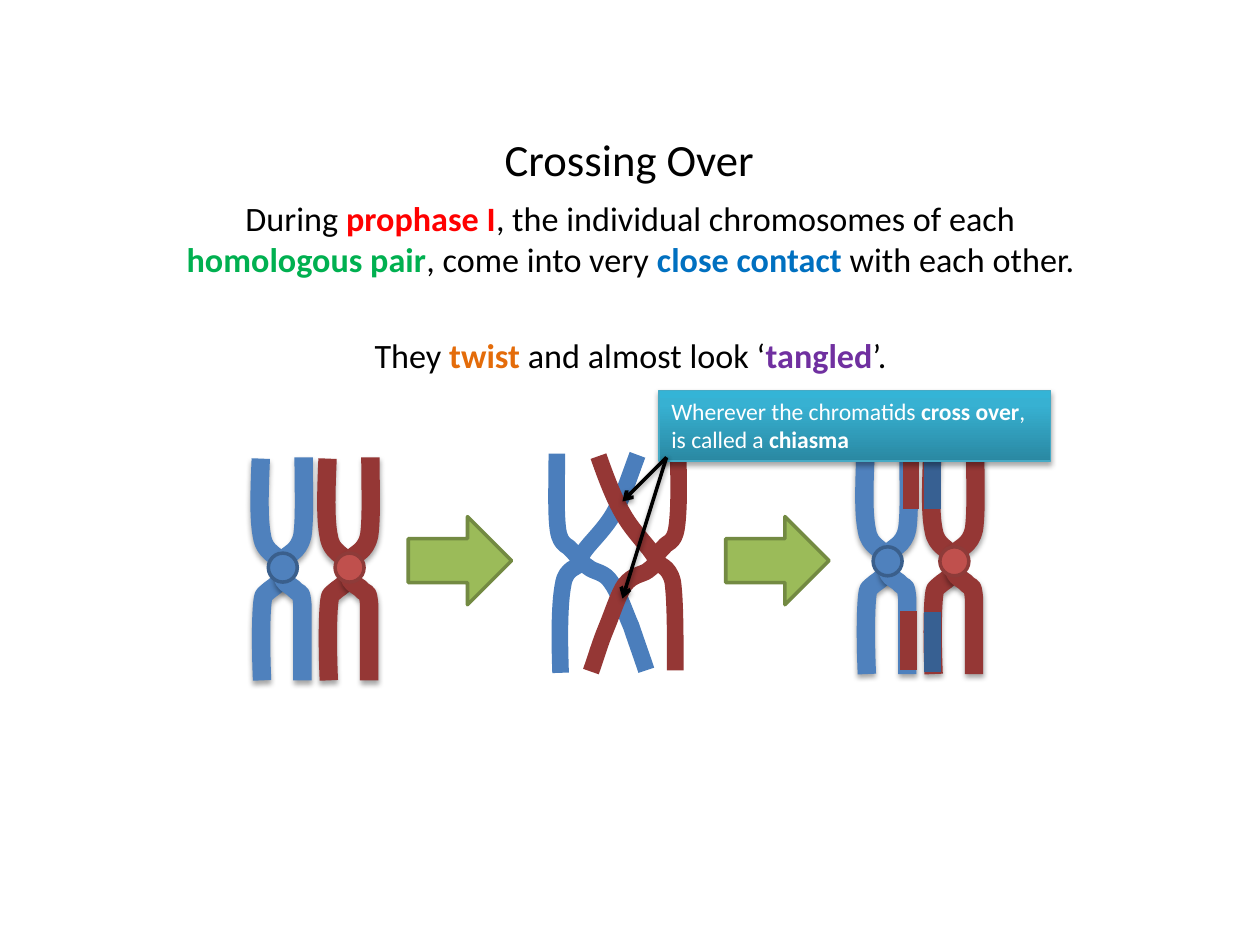
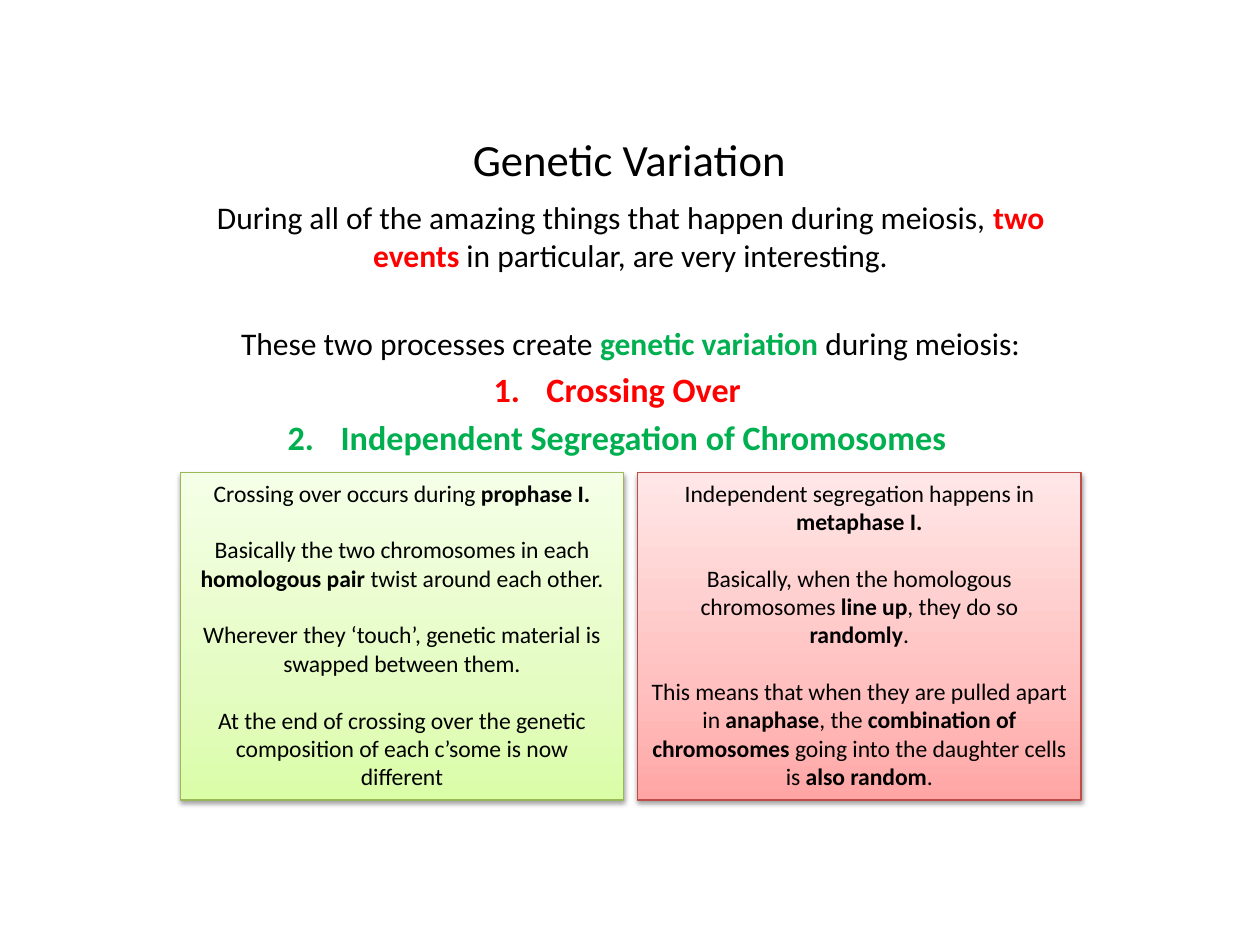
from dataclasses import dataclass
from typing import NamedTuple

from lxml import etree
from pptx import Presentation
from pptx.dml.color import RGBColor
from pptx.enum.shapes import MSO_CONNECTOR, MSO_SHAPE
from pptx.enum.text import MSO_ANCHOR, PP_ALIGN
from pptx.oxml.ns import qn
from pptx.util import Pt

PX = 9144  # 100 px to the inch
LEFT, CENTER = PP_ALIGN.LEFT, PP_ALIGN.CENTER
TOP, MIDDLE = MSO_ANCHOR.TOP, MSO_ANCHOR.MIDDLE
RECTANGLE, OVAL, RIGHT_ARROW = MSO_SHAPE.RECTANGLE, MSO_SHAPE.OVAL, MSO_SHAPE.RIGHT_ARROW
STRAIGHT = MSO_CONNECTOR.STRAIGHT


# Theme
@dataclass(frozen=True)
class Theme:
    font: str = "Calibri"
    title_size: float = 25.5
    lead_size: float = 19.5
    intro_size: float = 18
    note_size: float = 13.5
    line_height: float = 1.2
    space_before: float = 0.2
    outline: float = 0.75
    bold_outline: float = 2
    chromatid: float = 10.5
    strand: float = 9.5
    black: str = "000000"
    white: str = "FFFFFF"
    red: str = "FF0000"
    green: str = "00B050"
    blue: str = "0070C0"
    orange: str = "E46C0A"
    purple: str = "7030A0"
    maternal: str = "4F81BD"
    maternal_edge: str = "3A5F8C"
    maternal_strand: str = "4B7EBC"
    maternal_swap: str = "376092"
    paternal: str = "953735"
    paternal_center: str = "C0504D"
    paternal_edge: str = "8E3B39"
    step: str = "9BBB59"
    step_edge: str = "738A42"


THEME = Theme()


class Box(NamedTuple):
    x: int
    y: int
    w: int
    h: int


class Run(NamedTuple):
    text: str
    color: str = ""
    bold: bool = False


@dataclass(frozen=True)
class Para:
    runs: list[Run]
    size: float
    gap: bool = False  # one empty line's height above
    numbered: bool = False


class Shadow(NamedTuple):
    opacity: int
    blur: float
    distance: float


class Panel(NamedTuple):
    box: Box
    stops: list[tuple[int, str]]
    edge: str
    shadow: Shadow


class Chromosome(NamedTuple):
    x: int
    y: int
    arms: str
    center: str
    edge: str


class Strand(NamedTuple):
    color: str
    points: list[tuple[int, int]]


SOFT = Shadow(35, 3.1, 1.8)
FIRM = Shadow(38, 3.1, 1.6)
TITLE_BOX = Box(162, 111, 675, 29)
BODY_BOX = Box(137, 152, 727, 492)


def bold(text: str, color: str = "") -> Run:
    return Run(text, color, True)


# Drawing helpers
def rgb(color: str) -> RGBColor:
    return RGBColor.from_string(color)


def child(parent, tag: str, **attributes):
    return etree.SubElement(parent, qn(tag), {k: str(v) for k, v in attributes.items()})


def set_line(item, color: str, width: float) -> None:
    item.line.color.rgb = rgb(color)
    item.line.width = Pt(width)


def set_shadow(item, shadow: Shadow | None = None) -> None:
    """Call after fill and line: the effect list follows them."""
    effects = child(item._element.spPr, "a:effectLst")
    if shadow:
        outer = child(effects, "a:outerShdw", blurRad=Pt(shadow.blur),
                      dist=Pt(shadow.distance), dir=90 * 60000, rotWithShape=0)
        color = child(outer, "a:srgbClr", val=THEME.black)
        child(color, "a:alpha", val=shadow.opacity * 1000)


def write(frame, paras: list[Para], color: str, align: PP_ALIGN,
          anchor: MSO_ANCHOR = TOP, spacing: float = 0) -> None:
    frame.word_wrap = True
    frame.vertical_anchor = anchor
    for index, para in enumerate(paras):
        line = frame.paragraphs[0] if index == 0 else frame.add_paragraph()
        line.alignment = align
        lines_above = spacing + (THEME.line_height + spacing if para.gap else 0)
        line.space_before = Pt(round(para.size * lines_above, 1))
        if para.numbered:
            props = line._p.get_or_add_pPr()
            props.set("marL", str(14 * PX))
            props.set("indent", str(-42 * PX))
            child(props, "a:buFont", typeface="+mj-lt")
            child(props, "a:buAutoNum", type="arabicPeriod")
        for part in para.runs:
            run = line.add_run()
            run.text = part.text
            run.font.name = THEME.font
            run.font.size = Pt(para.size)
            run.font.bold = part.bold
            run.font.color.rgb = rgb(part.color or color)


def add_text(slide, box: Box, paras: list[Para], anchor: MSO_ANCHOR = TOP,
             spacing: float = 0) -> None:
    frame = slide.shapes.add_textbox(*(v * PX for v in box)).text_frame
    write(frame, paras, THEME.black, CENTER, anchor, spacing)


def add_heading(slide, title: str, body: list[Para]) -> None:
    add_text(slide, TITLE_BOX, [Para([Run(title)], THEME.title_size)], MIDDLE)
    add_text(slide, BODY_BOX, body, spacing=THEME.space_before)


def add_solid(slide, kind: MSO_SHAPE, box: Box, fill: str, edge: str) -> None:
    solid = slide.shapes.add_shape(kind, *(v * PX for v in box))
    solid.fill.solid()
    solid.fill.fore_color.rgb = rgb(fill)
    set_line(solid, edge, THEME.bold_outline)
    set_shadow(solid)


def add_panel(slide, panel: Panel, paras: list[Para], color: str, align: PP_ALIGN) -> None:
    card = slide.shapes.add_shape(RECTANGLE, *(v * PX for v in panel.box))
    gradient = child(card._element.spPr, "a:gradFill", rotWithShape=1)
    stops = child(gradient, "a:gsLst")
    for position, stop in panel.stops:
        child(child(stops, "a:gs", pos=position * 1000), "a:srgbClr", val=stop)
    child(gradient, "a:lin", ang=270 * 60000, scaled=0)
    set_line(card, panel.edge, THEME.outline)
    set_shadow(card, panel.shadow)
    write(card.text_frame, paras, color, align)


def add_line(slide, start: tuple[int, int], end: tuple[int, int], color: str,
             width: float, shadow: Shadow | None = None, arrow: bool = False) -> None:
    line = slide.shapes.add_connector(STRAIGHT, *(v * PX for v in start + end))
    set_line(line, color, width)
    if arrow:
        child(line.line._get_or_add_ln(), "a:tailEnd", type="arrow")
    set_shadow(line, shadow)


def add_curve(slide, points: list[tuple[int, int]], color: str, width: float,
              shadow: Shadow | None = None) -> None:
    """Draw chained cubic curves: a start, then three points per curve."""
    builder = slide.shapes.build_freeform(*points[0], scale=PX)
    builder.add_line_segments(points[1:], close=False)
    curve = builder.convert_to_shape()
    legs = list(curve._element.iter(qn("a:lnTo")))
    outline = legs[0].getparent()
    for i in range(0, len(legs), 3):
        cubic = child(outline, "a:cubicBezTo")
        for leg in legs[i:i + 3]:
            cubic.append(leg[0])
            outline.remove(leg)
    curve.fill.background()
    set_line(curve, color, width)
    set_shadow(curve, shadow)


# Chromosomes: arm points are measured from the centromere's corner
CENTROMERE = 23
ARMS = (
    [(-6, -75), (-7, -51), (-8, -27), (-5, -13), (-3, 0), (7, 1), (9, 7),
     (11, 12), (11, 18), (9, 22), (7, 26), (2, 28), (-1, 31),
     (-3, 34), (-4, 30), (-5, 42), (-6, 54), (-6, 78), (-5, 101)],
    [(28, -76), (28, -52), (29, -28), (27, -14), (24, 0), (15, 0), (12, 6),
     (10, 12), (11, 17), (12, 21), (14, 25), (20, 27), (22, 30),
     (25, 33), (26, 29), (27, 41), (27, 53), (27, 77), (27, 101)],
)
PAIR_GAP = 53
TWISTED = [
    Strand(THEME.maternal_strand, [
        (442, 360), (442, 384), (441, 408), (443, 421), (445, 434), (452, 433), (454, 437),
        (457, 441), (461, 442), (460, 447), (459, 451), (449, 450), (447, 464),
        (444, 479), (444, 506), (445, 534)]),
    Strand(THEME.maternal_strand, [
        (506, 361), (500, 377), (495, 393), (488, 406), (481, 419), (469, 430), (464, 437),
        (460, 443), (461, 442), (461, 445), (462, 447), (464, 448), (468, 451),
        (472, 454), (480, 454), (485, 462), (491, 470), (496, 486), (501, 497),
        (505, 509), (509, 520), (513, 532)]),
    Strand(THEME.paternal, [
        (475, 362), (481, 379), (487, 395), (494, 407), (501, 420), (513, 432), (517, 438),
        (522, 445), (521, 444), (521, 446), (520, 448), (518, 450), (514, 453),
        (510, 456), (502, 456), (496, 464), (491, 471), (486, 487), (481, 499),
        (476, 511), (473, 522), (469, 533)]),
    Strand(THEME.paternal, [
        (538, 357), (539, 382), (539, 406), (537, 419), (535, 432), (529, 430), (526, 435),
        (523, 439), (519, 440), (521, 445), (522, 449), (531, 448), (534, 462),
        (536, 477), (536, 504), (536, 532)]),
]
SWAP_LENGTH = 47
SWAPPED = [(721, 485, THEME.paternal), (740, 486, THEME.maternal_swap),
           (740, 357, THEME.maternal_swap), (723, 357, THEME.paternal)]


def add_pair(slide, x: int, y: int) -> None:
    pair = (Chromosome(x, y, THEME.maternal, THEME.maternal, THEME.maternal_edge),
            Chromosome(x + PAIR_GAP, y, THEME.paternal, THEME.paternal_center,
                       THEME.paternal_edge))
    for item in pair:
        for arm in ARMS:
            points = [(item.x + dx, item.y + dy) for dx, dy in arm]
            add_curve(slide, points, item.arms, THEME.chromatid, SOFT)
        add_solid(slide, OVAL, Box(item.x, item.y, CENTROMERE, CENTROMERE),
                  item.center, item.edge)


# Slide 1
def crossing_over(slide) -> None:
    size = THEME.lead_size
    add_heading(slide, "Crossing Over", [
        Para([Run("During "), bold("prophase I", THEME.red),
              Run(", the individual chromosomes of each "),
              bold("homologous pair", THEME.green), Run(", come into very "),
              bold("close contact ", THEME.blue), Run("with each other.")], size),
        Para([Run("They "), bold("twist", THEME.orange), Run(" and almost look ‘"),
              bold("tangled", THEME.purple), Run("’.")], size, gap=True)])
    add_pair(slide, 213, 439)
    for strand in TWISTED:
        add_curve(slide, strand.points, strand.color, THEME.strand)
    for x in (324, 576):
        add_solid(slide, RIGHT_ARROW, Box(x, 410, 82, 70), THEME.step, THEME.step_edge)
    add_pair(slide, 693, 434)
    for x, y, color in SWAPPED:
        add_line(slide, (x, y), (x, y + SWAP_LENGTH), color, THEME.strand)

    # Chiasma callout and its pointers
    callout = Panel(Box(523, 310, 311, 56),
                    [(0, "2A88A2"), (80, "37B1D2"), (100, "34B4D6")], "46AAC5", SOFT)
    add_panel(slide, callout, [
        Para([Run("Wherever the chromatids "), bold("cross over"),
              Run(", is called a "), bold("chiasma")], THEME.note_size)], THEME.white, LEFT)
    for chiasma in ((494, 398), (494, 475)):
        add_line(slide, (529, 363), chiasma, THEME.black, THEME.bold_outline, FIRM, arrow=True)


# Slide 2
def genetic_variation(slide) -> None:
    intro, lead, note = THEME.intro_size, THEME.lead_size, THEME.note_size
    add_heading(slide, "Genetic Variation", [
        Para([Run("During all of the amazing things that happen during meiosis, "),
              bold("two events", THEME.red),
              Run(" in particular, are very interesting.")], intro),
        Para([Run("These two processes create "), bold("genetic variation", THEME.green),
              Run(" during meiosis:")], intro, gap=True),
        Para([bold("Crossing Over", THEME.red)], lead, numbered=True),
        Para([bold("Independent Segregation of Chromosomes", THEME.green)], lead,
             numbered=True)])

    crossing = [
        [Run("Crossing over occurs during "), bold("prophase I.")],
        [Run("Basically the two chromosomes in each "), bold("homologous pair"),
         Run(" twist around each other.")],
        [Run("Wherever they ‘touch’, genetic material is swapped between them.")],
        [Run("At the end of crossing over the genetic composition of each c’some "
             "is now different")]]
    segregation = [
        [Run("Independent segregation happens in "), bold("metaphase I.")],
        [Run("Basically, when the homologous chromosomes "), bold("line up"),
         Run(", they do so"), bold(" randomly"), Run(".")],
        [Run("This means that when they are pulled apart in "), bold("anaphase"),
         Run(", the "), bold("combination of chromosomes "),
         Run("going into the daughter cells is "), bold("also random"), Run(".")]]
    greens = [(0, "DAFDA7"), (35, "E4FCC2"), (100, "F5FFE7")]
    reds = [(0, "FFA6A5"), (35, "FFC0BF"), (100, "FFE7E7")]
    for x, stops, edge, texts in ((506, reds, "BF4C48", segregation),
                                  (143, greens, "98B955", crossing)):
        paras = [Para(runs, note, gap=i > 0) for i, runs in enumerate(texts)]
        add_panel(slide, Panel(Box(x, 375, 352, 260), stops, edge, FIRM),
                  paras, THEME.black, CENTER)


def main() -> None:
    deck = Presentation()
    deck.slide_width, deck.slide_height = 1000 * PX, 750 * PX
    blank = deck.slide_layouts[6]
    for draw in (crossing_over, genetic_variation):
        draw(deck.slides.add_slide(blank))
    deck.save("out.pptx")


if __name__ == "__main__":
    main()
